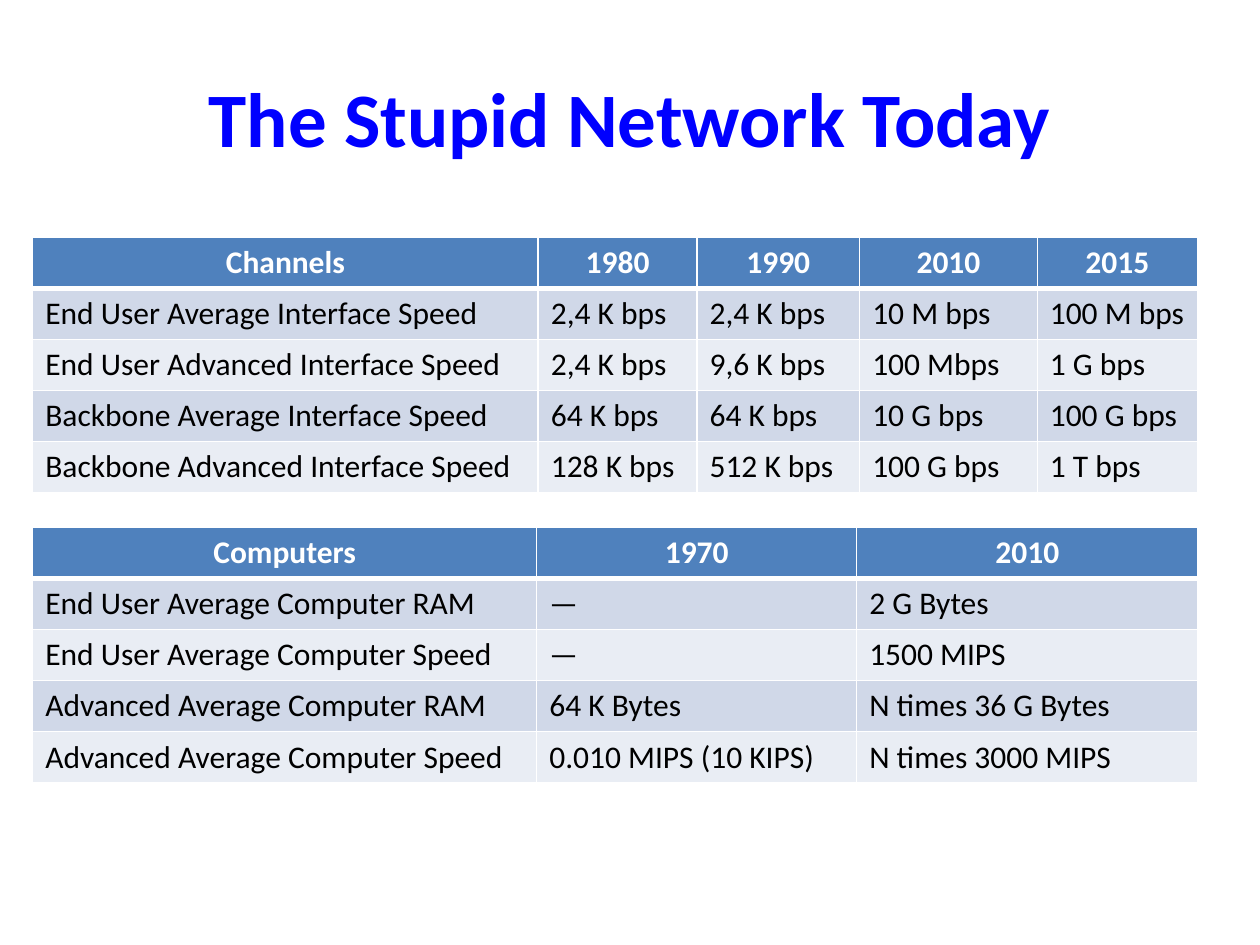
from lxml import etree
from pptx import Presentation
from pptx import util as u
from pptx.dml.color import RGBColor
from pptx.enum import text
from pptx.oxml import ns

BLUE = RGBColor(0x00, 0x00, 0xFF)
HEAD = RGBColor(0x4F, 0x81, 0xBD)
BANDS = [RGBColor(0xE9, 0xED, 0xF4), RGBColor(0xD0, 0xD8, 0xE8)]
WHITE = RGBColor(0xFF, 0xFF, 0xFF)
BLACK = RGBColor(0x00, 0x00, 0x00)

TITLE = "The Stupid Network Today"
TABLES = [
    {"top": 4.78, "cols": [10.19, 3.2, 3.28, 3.58, 3.23], "rows": [
        ["Channels", "1980", "1990", "2010", "2015"],
        ["End User Average Interface Speed", "2,4 K bps", "2,4 K bps", "10 M bps", "100 M bps"],
        ["End User Advanced Interface Speed", "2,4 K bps", "9,6 K bps", "100 Mbps", "1 G bps"],
        ["Backbone Average Interface Speed", "64 K bps", "64 K bps", "10 G bps", "100 G bps"],
        ["Backbone Advanced Interface Speed", "128 K bps", "512 K bps", "100 G bps", "1 T bps"],
    ]},
    {"top": 10.63, "cols": [10.16, 6.45, 6.88], "rows": [
        ["Computers", "1970", "2010"],
        ["End User Average Computer RAM", "—", "2 G Bytes"],
        ["End User Average Computer Speed", "—", "1500 MIPS"],
        ["Advanced Average Computer RAM", "64 K Bytes", "N times 36 G Bytes"],
        ["Advanced Average Computer Speed", "0.010 MIPS (10 KIPS)", "N times 3000 MIPS"],
    ]},
]
LEFT, ROW = 0.66, 1.03


def style(para, color, align, **form):
    para.alignment = align
    font = para.runs[0].font
    for key, val in {"name": "Calibri", **form}.items():
        setattr(font, key, val)
    font.color.rgb = color


def edge(cell, row):
    props = cell._tc.get_or_add_tcPr()
    thick = {"lnT": row == 1, "lnB": row == 0}
    for side in ("lnL", "lnR", "lnT", "lnB"):
        width = u.Pt(3 if thick.get(side) else 1)
        line = etree.SubElement(props, ns.qn("a:" + side), w=str(width))
        fill = etree.SubElement(line, ns.qn("a:solidFill"))
        etree.SubElement(fill, ns.qn("a:srgbClr"), val=str(WHITE))


def draw(slide, top, cols, rows):
    table = slide.shapes.add_table(
        len(rows), len(cols), u.Cm(LEFT), u.Cm(top),
        u.Cm(sum(cols)), u.Cm(ROW * len(rows))).table
    for col, width in zip(table.columns, cols):
        col.width = u.Cm(width)
    for r, row in enumerate(rows):
        head = r == 0
        for c, words in enumerate(row):
            cell = table.cell(r, c)
            cell.text = words
            edge(cell, r)
            cell.fill.solid()
            cell.fill.fore_color.rgb = HEAD if head else BANDS[r % 2]
            style(cell.text_frame.paragraphs[0], WHITE if head else BLACK,
                  text.PP_ALIGN.CENTER if head else text.PP_ALIGN.LEFT,
                  size=u.Pt(18), bold=head)


def main():
    deck = Presentation()
    deck.slide_width, deck.slide_height = u.Cm(25.4), u.Cm(19.05)
    slide = deck.slides.add_slide(deck.slide_layouts[5])
    title = slide.shapes.title
    place = {"left": 1.27, "top": 0.76, "width": 22.86, "height": 3.18}
    for key, val in place.items():
        setattr(title, key, u.Cm(val))
    title.text_frame.text = TITLE
    title.text_frame.vertical_anchor = text.MSO_ANCHOR.MIDDLE
    style(title.text_frame.paragraphs[0], BLUE, text.PP_ALIGN.CENTER,
          size=u.Pt(44), bold=True)
    for data in TABLES:
        draw(slide, **data)
    deck.save("out.pptx")


if __name__ == "__main__":
    main()
